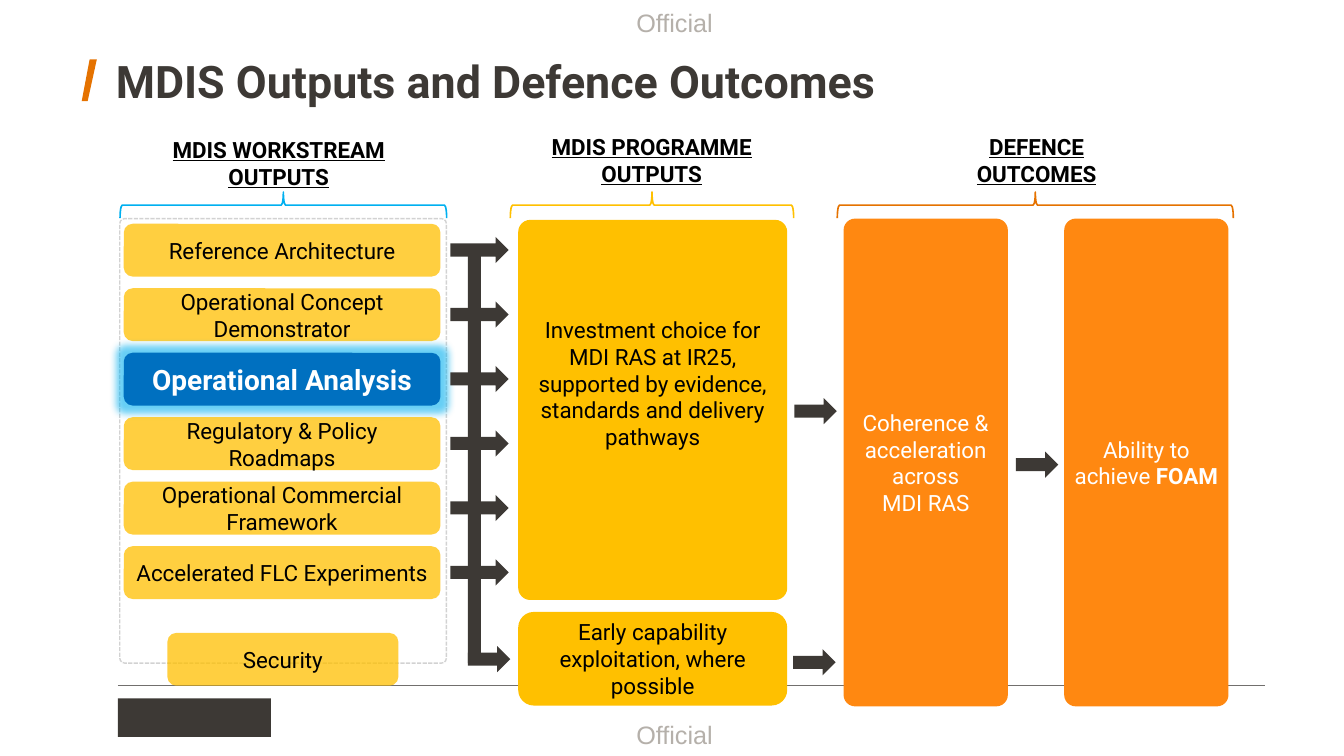
"""Build the slide that links workstream outputs to defence outcomes."""
from dataclasses import dataclass

from pptx import Presentation
from pptx.dml.color import RGBColor as Rgb
from pptx.enum.dml import MSO_LINE as Dash
from pptx.enum.shapes import MSO_CONNECTOR as Link, MSO_SHAPE as Kind
from pptx.enum.text import MSO_ANCHOR as Anchor, PP_ALIGN as Align
from pptx.oxml import parse_xml
from pptx.oxml.ns import nsdecls, qn
from pptx.util import Cm, Pt


@dataclass(frozen=True)
class Theme:
    """Colours, fonts and type sizes of the slide."""
    dark: str = "3D3935"
    gold: str = "FFC000"
    orange: str = "FF8811"
    rust: str = "E57200"
    blue: str = "0070C0"
    sky: str = "00B0F0"
    mark: str = "B5B0AA"
    rule: str = "716F6D"
    frame: str = "A6A6A6"
    black: str = "000000"
    white: str = "FFFFFF"
    font: str = "Roboto"
    plain: str = "Arial"
    title: int = 32
    focus: int = 20
    label: int = 18
    body: int = 16


T = Theme()


def fade(part, share):
    """Set the opacity of a solid fill element in percent."""
    part.find(qn("a:solidFill"))[0].append(
        parse_xml(f'<a:alpha {nsdecls("a")} val="{share * 1000}"/>'))


def write(shape, paras, size=T.body, tint=T.black, font=T.font, bold=False,
          under=False, align=Align.CENTER, pads=None):
    """Fill a shape with paragraphs, each a list of (text, bold) runs."""
    frame = shape.text_frame
    frame.word_wrap = True
    if pads:
        (frame.margin_left, frame.margin_top,
         frame.margin_right, frame.margin_bottom) = map(Cm, pads)
    for num, runs in enumerate(paras):
        para = frame.add_paragraph() if num else frame.paragraphs[0]
        para.alignment = align
        for text, heavy in runs:
            if text == "\n":
                para.add_line_break()
                continue
            run = para.add_run()
            run.text = text
            run.font.name = font
            run.font.size = Pt(size)
            run.font.bold = bold or heavy
            run.font.underline = under
            run.font.color.rgb = Rgb.from_string(tint)
    return frame


def lines(*texts):
    """Turn strings into plain one-run paragraphs."""
    return [[(text, False)] for text in texts]


def block(slide, kind, box, fill=None, alpha=None, curve=None):
    """Add a preset shape with a flat fill and no outline."""
    shape = slide.shapes.add_shape(kind, *map(Cm, box))
    shape.shadow.inherit = False
    shape.line.fill.background()
    if fill:
        shape.fill.solid()
        shape.fill.fore_color.rgb = Rgb.from_string(fill)
    else:
        shape.fill.background()
    if alpha:
        fade(shape._element.spPr, alpha)
    if curve:
        shape.adjustments[0] = curve
    return shape


def card(slide, box, fill, paras, alpha=None, curve=None, **style):
    """Add a rounded card with centred text."""
    shape = block(slide, Kind.ROUNDED_RECTANGLE, box, fill, alpha, curve)
    write(shape, paras, **style).vertical_anchor = Anchor.MIDDLE
    return shape


def glow(shape, tint):
    """Add a soft glow around a shape."""
    shape._element.spPr.find(qn("a:effectLst")).append(parse_xml(
        f'<a:glow {nsdecls("a")} rad="139700"><a:srgbClr val="{tint}">'
        '<a:alpha val="60000"/></a:srgbClr></a:glow>'))


def arrow(slide, left, top, width=1.07):
    """Add a dark block arrow that points right."""
    block(slide, Kind.RIGHT_ARROW, (left, top, width, 0.66), T.dark)


def brace(slide, mid, span, tint):
    """Add a brace that points up, centred on mid."""
    shape = block(slide, Kind.LEFT_BRACE,
                  (mid - 0.33, 5.17 - span / 2, 0.66, span))
    shape.rotation = 90
    shape.line.color.rgb = Rgb.from_string(tint)
    shape.line.width = Pt(1.15)


def note(slide, box, paras, **style):
    """Add a text box."""
    write(slide.shapes.add_textbox(*map(Cm, box)), paras, **style)


def slash(slide):
    """Draw the slanted bar beside the title."""
    draw = slide.shapes.build_freeform(Cm(2.44), Cm(1.5))
    draw.add_line_segments([(Cm(x), Cm(y)) for x, y in
                            ((2.21, 2.55), (2.06, 2.55), (2.26, 1.5))])
    shape = draw.convert_to_shape()
    shape.shadow.inherit = False
    shape.fill.solid()
    shape.fill.fore_color.rgb = Rgb.from_string(T.rust)
    shape.line.fill.background()


def base(slide):
    """Draw the footer, the markings and the title."""
    block(slide, Kind.RECTANGLE, (2.97, 17.6, 3.86, 0.97), T.dark)
    slash(slide)
    rule = slide.shapes.add_connector(
        Link.STRAIGHT, Cm(2.97), Cm(17.27), Cm(31.88), Cm(17.27))
    rule.line.color.rgb = Rgb.from_string(T.rule)
    rule.line.width = Pt(0.5)
    rule._element.spPr.append(parse_xml(f'<a:effectLst {nsdecls("a")}/>'))
    for top in (0.05, 18.01):
        note(slide, (15.4, top, 3.2, 1.02), lines("Official"),
             size=T.label, tint=T.mark, font=T.plain)
    box = slide.shapes.add_textbox(Cm(2.92), Cm(1.5), Cm(28.91), Cm(2.01))
    frame = write(box, lines("MDIS Outputs and Defence Outcomes"),
                  size=T.title, tint=T.dark, bold=True, align=Align.LEFT,
                  pads=(0, 0, 0, 0))
    frame.paragraphs[0].line_spacing = 0.9


def streams(slide):
    """Draw the workstream cards and the arrows that leave them."""
    frame = block(slide, Kind.ROUNDED_RECTANGLE, (3.02, 5.51, 8.23, 11.2),
                  curve=0.015)
    frame.line.color.rgb = Rgb.from_string(T.frame)
    frame.line.width = Pt(1)
    frame.line.dash_style = Dash.SQUARE_DOT
    fade(frame._element.spPr.find(qn("a:ln")), 50)
    focus = "Operational Analysis"
    names = ("Reference Architecture", "Operational Concept Demonstrator",
             focus, "Regulatory & Policy Roadmaps",
             "Operational Commercial Framework", "Accelerated FLC Experiments")
    for num, name in enumerate(names):
        top = 5.64 + 1.625 * num
        box = (3.12, top, 7.98, 1.33)
        if name == focus:
            glow(card(slide, box, T.blue, lines(name), size=T.focus,
                      tint=T.white, bold=True), T.sky)
        else:
            card(slide, box, T.gold, lines(name), alpha=75)
        arrow(slide, 11.35, top + 0.33, 1.47)
    card(slide, (4.22, 15.95, 5.82, 1.33), T.gold, lines("Security"), alpha=75)
    block(slide, Kind.RECTANGLE, (11.79, 6.45, 0.33, 10.26), T.dark)


def main():
    """Build and save the slide."""
    deck = Presentation()
    deck.slide_width, deck.slide_height = Cm(33.87), Cm(19.05)
    slide = deck.slides.add_slide(deck.slide_layouts[6])
    base(slide)
    streams(slide)
    card(slide, (13.06, 5.54, 6.78, 9.58), T.gold,
         lines("Investment choice for MDI RAS at IR25, supported by evidence,",
               "standards and delivery pathways"),
         curve=0.045, pads=(0.33, 0.18, 0.33, 1.53))
    card(slide, (13.06, 15.42, 6.78, 2.36), T.gold,
         lines("Early capability exploitation, where possible"))
    goals = ((21.26, [("Coherence & acceleration across", False),
                      ("\n", False), ("MDI RAS", False)]),
             (26.82, [("Ability to achieve ", False), ("FOAM", True)]))
    for left, runs in goals:
        card(slide, (left, 5.51, 4.14, 12.29), T.orange, [runs], curve=0.07,
             tint=T.white, pads=(0.13,) * 4)
    for spot in ((11.79, 16.28), (20.02, 10.03), (19.99, 16.36), (25.6, 11.38)):
        arrow(slide, *spot)
    heads = ((3.38, 3.3, ("MDIS WORKSTREAM OUTPUTS",), 7.14, 8.23, T.sky),
             (12.78, 3.23, ("MDIS PROGRAMME OUTPUTS",), 16.43, 7.14, T.gold),
             (22.48, 3.23, ("DEFENCE", "OUTCOMES"), 26.09, 9.98, T.rust))
    for left, top, texts, mid, span, tint in heads:
        note(slide, (left, top, 7.29, 1.63), lines(*texts),
             bold=True, under=True)
        brace(slide, mid, span, tint)
    deck.save("out.pptx")


if __name__ == "__main__":
    main()
